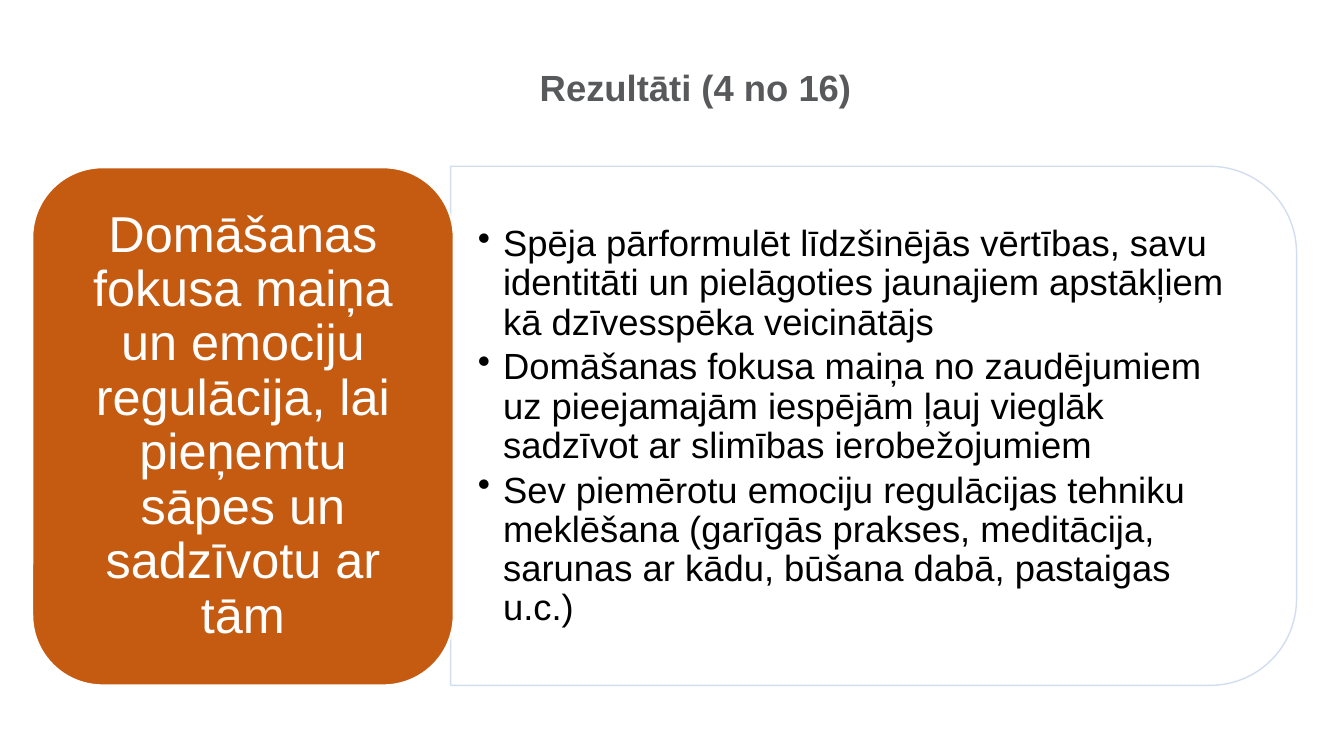
from dataclasses import dataclass

from lxml import etree
from pptx import Presentation
from pptx.dml.color import RGBColor
from pptx.enum.shapes import MSO_SHAPE
from pptx.enum.text import MSO_ANCHOR, PP_ALIGN
from pptx.oxml.ns import qn
from pptx.util import Inches, Pt

SLIDE_WIDTH, SLIDE_HEIGHT = Inches(13.33), Inches(7.5)
FONT_NAME = "Arial"
LINE_SPACING = 0.9
BULLET_INDENT = Inches(0.25)

ORANGE = RGBColor(0xC5, 0x5A, 0x11)
PALE_BLUE = RGBColor(0xD2, 0xDE, 0xEF)
GREY = RGBColor(0x58, 0x59, 0x5B)
WHITE = RGBColor(0xFF, 0xFF, 0xFF)
BLACK = RGBColor(0x00, 0x00, 0x00)

ROUNDED = MSO_SHAPE.ROUNDED_RECTANGLE
ROUNDED_TOP = MSO_SHAPE.ROUND_2_SAME_RECTANGLE
LEFT, CENTER = PP_ALIGN.LEFT, PP_ALIGN.CENTER
TOP, MIDDLE = MSO_ANCHOR.TOP, MSO_ANCHOR.MIDDLE


@dataclass(frozen=True)
class Area:
    """A place on the slide, in percent of its width and height."""
    left: float
    top: float
    width: float
    height: float

    def lengths(self) -> tuple[int, int, int, int]:
        return (int(SLIDE_WIDTH * self.left / 100),
                int(SLIDE_HEIGHT * self.top / 100),
                int(SLIDE_WIDTH * self.width / 100),
                int(SLIDE_HEIGHT * self.height / 100))


@dataclass(frozen=True)
class TextStyle:
    size: int
    color: RGBColor
    bold: bool = False
    align: PP_ALIGN = CENTER
    anchor: MSO_ANCHOR = MIDDLE
    inset_x: float = 0
    inset_y: float = 0
    space_after: float = 0
    bulleted: bool = False


TITLE_AREA = Area(8.63, 9.33, 86.27, 15.07)
PANEL_AREA = Area(33.53, 22, 62.94, 68.67)
BULLETS_AREA = Area(33.53, 25.47, 61.07, 62)
THEME_AREA = Area(2.4, 22.13, 31.36, 68.53)

TITLE_STYLE = TextStyle(26, GREY, bold=True, anchor=TOP)
BULLETS_STYLE = TextStyle(26, BLACK, align=LEFT, inset_x=0.27, inset_y=0.14,
                          space_after=3.9, bulleted=True)
THEME_STYLE = TextStyle(36, WHITE, inset_x=0.15, inset_y=0.07)

TITLE = "Rezultāti (4 no 16)"
THEME = ("Domāšanas fokusa maiņa un emociju regulācija, "
         "lai pieņemtu sāpes un sadzīvotu ar tām")
FINDINGS = [
    "Spēja pārformulēt līdzšinējās vērtības, savu identitāti un pielāgoties "
    "jaunajiem apstākļiem kā dzīvesspēka veicinātājs",
    "Domāšanas fokusa maiņa no zaudējumiem uz pieejamajām iespējām ļauj "
    "vieglāk sadzīvot ar slimības ierobežojumiem",
    "Sev piemērotu emociju regulācijas tehniku meklēšana (garīgās prakses, "
    "meditācija, sarunas ar kādu, būšana dabā, pastaigas u.c.)",
]


def add_bullet(paragraph) -> None:
    properties = paragraph._p.get_or_add_pPr()
    properties.set("marL", str(BULLET_INDENT))
    properties.set("indent", str(-BULLET_INDENT))
    etree.SubElement(properties, qn("a:buChar")).set("char", "•")


def write_text(box, texts: list[str], style: TextStyle) -> None:
    frame = box.text_frame
    frame.word_wrap = True
    frame.vertical_anchor = style.anchor
    frame.margin_left = frame.margin_right = Inches(style.inset_x)
    frame.margin_top = frame.margin_bottom = Inches(style.inset_y)
    frame.text = "\n".join(texts)
    for paragraph in frame.paragraphs:
        if style.bulleted:
            add_bullet(paragraph)
        paragraph.alignment = style.align
        paragraph.line_spacing = LINE_SPACING
        paragraph.space_after = Pt(style.space_after)
        paragraph.font.name = FONT_NAME
        paragraph.font.size = Pt(style.size)
        paragraph.font.bold = style.bold
        paragraph.font.color.rgb = style.color


def add_text_box(page, area: Area, texts: list[str], style: TextStyle) -> None:
    write_text(page.shapes.add_textbox(*area.lengths()), texts, style)


def add_block(page, kind: MSO_SHAPE, area: Area, fill: RGBColor,
              line: RGBColor, line_width: float, quarter_turn: bool = False):
    left, top, width, height = area.lengths()
    if quarter_turn:
        # The frame is set before the turn, around the same centre
        left, top = left + (width - height) // 2, top + (height - width) // 2
        width, height = height, width
    block = page.shapes.add_shape(kind, left, top, width, height)
    block.rotation = 90 if quarter_turn else 0
    block.shadow.inherit = False
    block.fill.solid()
    block.fill.fore_color.rgb = fill
    block.line.color.rgb = line
    block.line.width = Pt(line_width)
    return block


def main() -> None:
    deck = Presentation()
    deck.slide_width, deck.slide_height = SLIDE_WIDTH, SLIDE_HEIGHT
    page = deck.slides.add_slide(deck.slide_layouts[6])

    # Title
    add_text_box(page, TITLE_AREA, [TITLE], TITLE_STYLE)

    # Findings panel, rounded on its right side
    add_block(page, ROUNDED_TOP, PANEL_AREA, WHITE, PALE_BLUE, 1,
              quarter_turn=True)
    add_text_box(page, BULLETS_AREA, FINDINGS, BULLETS_STYLE)

    # Theme card
    theme_card = add_block(page, ROUNDED, THEME_AREA, ORANGE, WHITE, 1.5)
    write_text(theme_card, [THEME], THEME_STYLE)

    deck.save("out.pptx")


if __name__ == "__main__":
    main()
